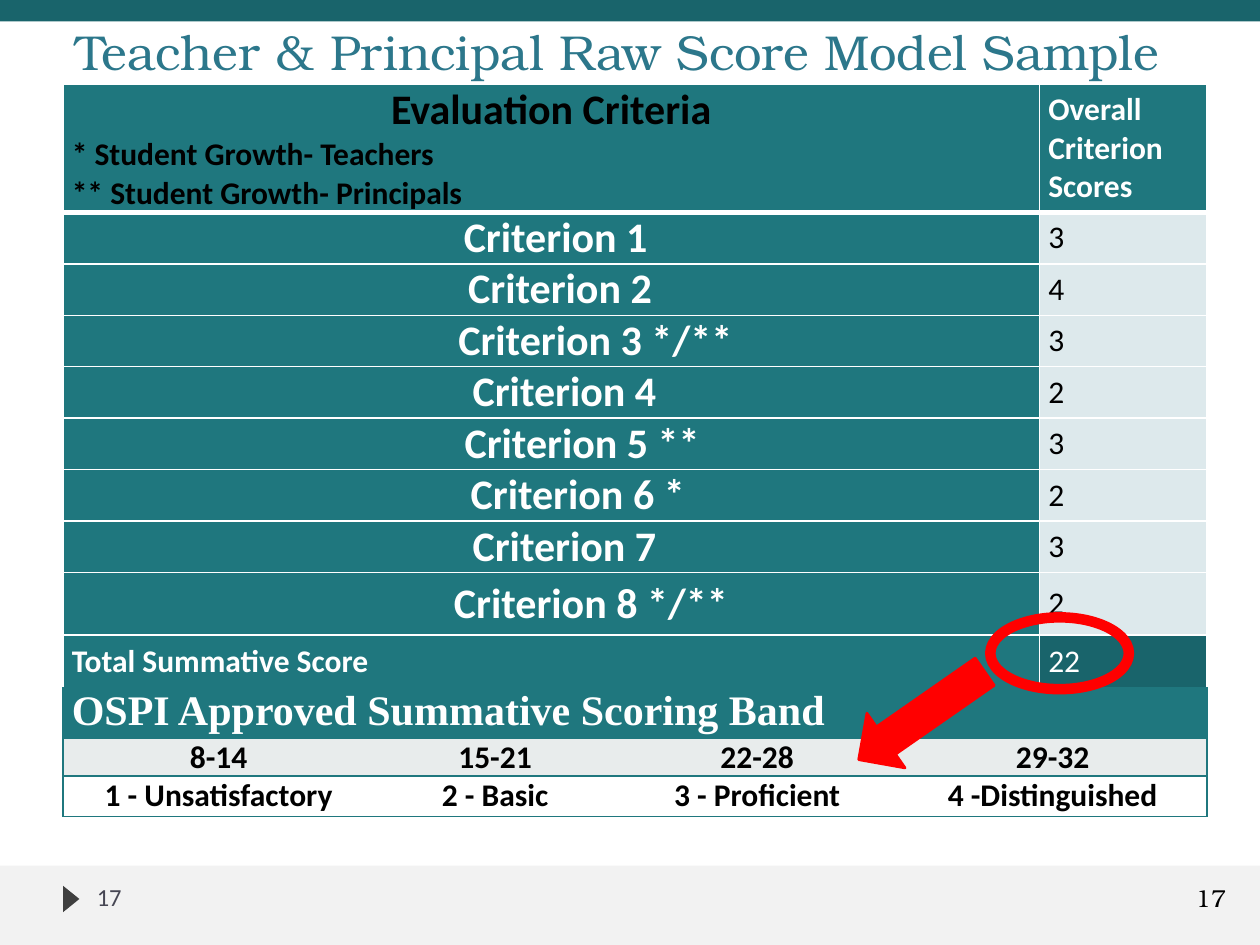
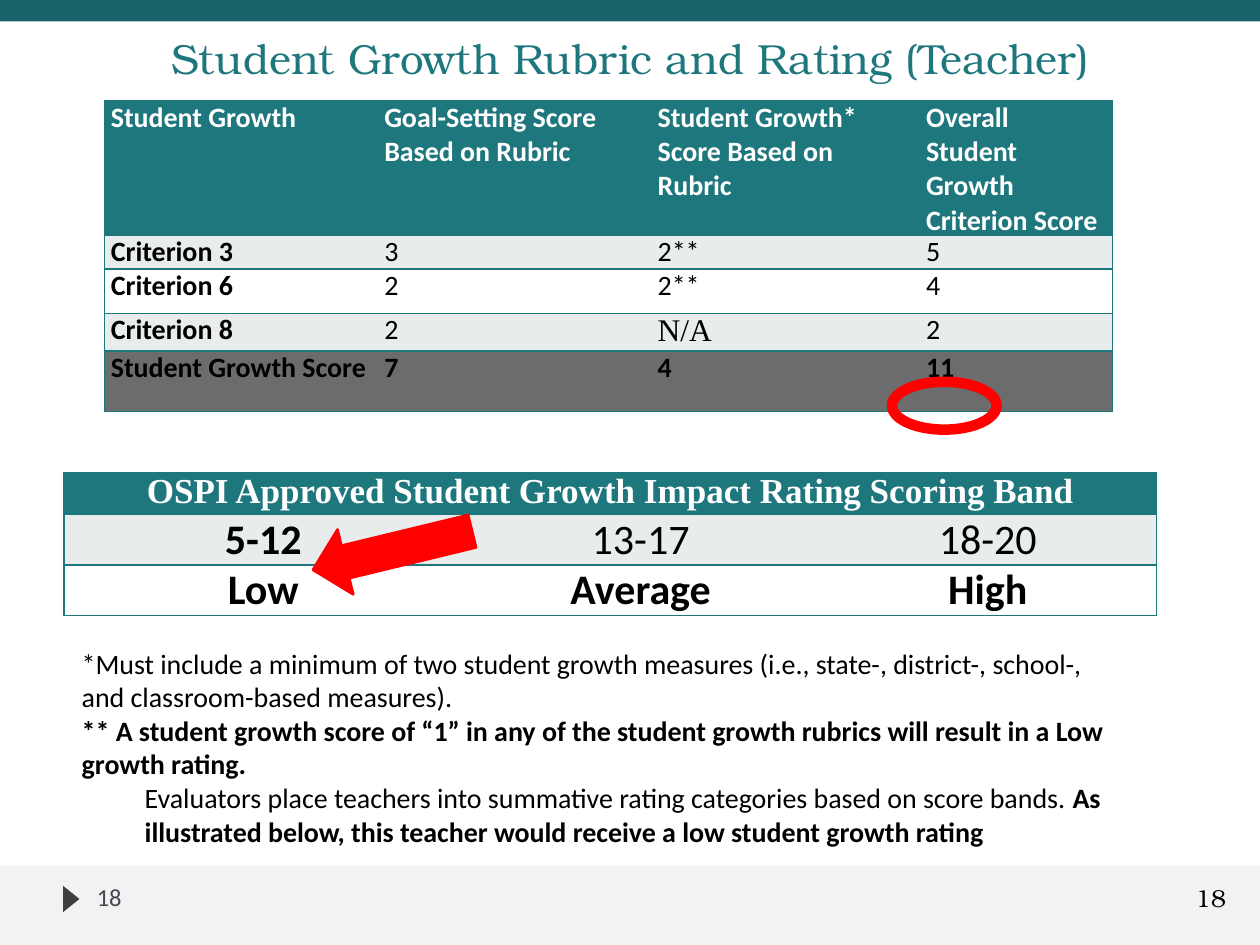
from dataclasses import dataclass, replace

from lxml import etree
from pptx import Presentation
from pptx.dml.color import RGBColor
from pptx.enum.shapes import MSO_SHAPE
from pptx.enum.text import MSO_ANCHOR, MSO_AUTO_SIZE, PP_ALIGN
from pptx.oxml.ns import qn
from pptx.util import Inches, Pt

RECTANGLE, TRIANGLE = MSO_SHAPE.RECTANGLE, MSO_SHAPE.ISOSCELES_TRIANGLE
OVAL, DOWN_ARROW = MSO_SHAPE.OVAL, MSO_SHAPE.DOWN_ARROW
LEFT, CENTER, RIGHT = PP_ALIGN.LEFT, PP_ALIGN.CENTER, PP_ALIGN.RIGHT
TOP, MIDDLE, BOTTOM = MSO_ANCHOR.TOP, MSO_ANCHOR.MIDDLE, MSO_ANCHOR.BOTTOM
NO_AUTOFIT = MSO_AUTO_SIZE.NONE

TEAL = RGBColor(0x1F, 0x77, 0x7E)
DARK_TEAL = RGBColor(0x19, 0x64, 0x6B)
TITLE_BLUE = RGBColor(0x2C, 0x77, 0x8B)
PALE_BLUE = RGBColor(0xDD, 0xE9, 0xEC)
PALE_GREY = RGBColor(0xE8, 0xEC, 0xEC)
FOOTER_GREY = RGBColor(0xF2, 0xF2, 0xF2)
TOTAL_GREY = RGBColor(0x6C, 0x6C, 0x6C)
MARKER_GREY = RGBColor(0x3F, 0x3F, 0x3F)
NUMBER_GREY = RGBColor(0x46, 0x46, 0x53)
RED = RGBColor(0xFF, 0, 0)
BLACK = RGBColor(0, 0, 0)
WHITE = RGBColor(0xFF, 0xFF, 0xFF)

SANS, DISPLAY, SERIF = "Calibri", "TeX Gyre Bonum", "Times New Roman"
GRID_COLUMNS, GRID_ROWS = 100, 75
UNIT = Inches(0.1)
SPACE_WIDTH = Inches(0.07)


@dataclass(frozen=True)
class Box:
    """An area measured in grid columns and rows."""
    left: float
    top: float
    width: float
    height: float

    def area(self, left, top, width, height):
        """Return an area placed from this area's corner."""
        return Box(self.left + left, self.top + top, width, height)

    def lengths(self):
        """Return left, top, width and height as slide lengths."""
        return [round(side * UNIT) for side in (self.left, self.top, self.width, self.height)]


@dataclass(frozen=True)
class Look:
    """The font, size, colour and weight of a run."""
    size: int
    color: RGBColor = BLACK
    bold: bool = False
    font: str = SANS


@dataclass(frozen=True)
class Line:
    """One paragraph: its runs, alignment and indent."""
    runs: tuple
    align: int = LEFT
    indent: int = 0


PAGE = Box(0, 0, GRID_COLUMNS, GRID_ROWS)


def line(text, look, align=LEFT, indent=0):
    """Make a paragraph of a single run."""
    return Line(((text, look),), align, indent)


def write(frame, lines):
    """Fill a text frame run by run."""
    frame.word_wrap = True
    for index, item in enumerate(lines):
        para = frame.add_paragraph() if index else frame.paragraphs[0]
        para.alignment = item.align
        para.space_before = Pt(0)
        if item.indent:
            properties = para._p.get_or_add_pPr()
            properties.set("marL", str(item.indent))
            properties.set("indent", "0")
        for text, look in item.runs:
            span = para.add_run()
            span.text = text
            span.font.name = look.font
            span.font.size = Pt(look.size)
            span.font.bold = look.bold
            span.font.color.rgb = look.color


def add_text(page, box, lines):
    """Place a text box."""
    write(page.shapes.add_textbox(*box.lengths()).text_frame, lines)


def add_form(page, kind, box, fill=None, outline=None, weight=0, turn=0):
    """Place a preset shape with an optional fill and outline."""
    form = page.shapes.add_shape(kind, *box.lengths())
    form.shadow.inherit = False
    form.rotation = turn
    if fill is None:
        form.fill.background()
    else:
        form.fill.solid()
        form.fill.fore_color.rgb = fill
    if outline is None:
        form.line.fill.background()
    else:
        form.line.color.rgb = outline
        form.line.width = Pt(weight)


def add_ring(page, box):
    """Circle a score in red."""
    add_form(page, OVAL, box, outline=RED, weight=6)


def add_pointer(page, box, turn):
    """Point a red arrow at a score band."""
    add_form(page, DOWN_ARROW, box, RED, RED, 1.5, turn)


def set_edges(cell, edges):
    """Draw the left, right, top and bottom edges from (colour, points) pairs."""
    properties = cell._tc.get_or_add_tcPr()
    for index, (side, edge) in enumerate(zip("LRTB", edges)):
        border = etree.Element(qn(f"a:ln{side}"))
        if edge:
            color, weight = edge
            border.set("w", str(Pt(weight)))
            solid = etree.SubElement(border, qn("a:solidFill"))
            etree.SubElement(solid, qn("a:srgbClr"), val=str(color))
        else:
            etree.SubElement(border, qn("a:noFill"))
        properties.insert(index, border)


def fill_cell(cell, lines, fill, edges, anchor=TOP, inset=0.07):
    """Write and format one table cell."""
    cell.margin_left = cell.margin_right = Inches(inset)
    cell.margin_top = cell.margin_bottom = 0
    cell.vertical_anchor = anchor
    cell.fill.solid()
    cell.fill.fore_color.rgb = fill
    write(cell.text_frame, lines)
    set_edges(cell, edges)


def add_grid(page, box, columns, rows):
    """Place a table whose columns and rows share the box by weight."""
    table = page.shapes.add_table(len(rows), len(columns), *box.lengths()).table
    _, _, width, height = box.lengths()
    for column, weight in zip(table.columns, columns):
        column.width = round(width * weight / sum(columns))
    for row, weight in zip(table.rows, rows):
        row.height = round(height * weight / sum(rows))
    return table


def ruled_edges(column, last):
    """Return teal rules above and below, closed at the table's sides."""
    rule = (TEAL, 1)
    return (rule if column == 0 else None, rule if column == last else None, rule, rule)


def add_band(page, box, columns, rows, heading, body):
    """Place a scoring band: a merged heading over rows of centred cells."""
    table = add_grid(page, box, columns, rows)
    last = len(columns) - 1
    table.cell(0, 0).merge(table.cell(0, last))
    for column in range(last + 1):
        lines = [heading] if column == 0 else []
        fill_cell(table.cell(0, column), lines, TEAL, [(TEAL, 1)] * 4)
    for row, (fill, entries) in enumerate(zip((PALE_GREY, WHITE), body), 1):
        for column, (text, look) in enumerate(entries):
            fill_cell(table.cell(row, column), [line(text, look, CENTER)], fill,
                      ruled_edges(column, last))


def add_criteria(page, box):
    """Place the table of criterion scores."""
    criteria = (("1", 1, "3"), ("2", 2, "4"), ("3 */**", 10, "3"), ("4", 3, "2"),
                ("5 **", 7, "3"), ("6 *", 6, "2"), ("7", 3, "3"), ("8 */**", 9, "2"))
    table = add_grid(page, box, (7.75, 1.33), (1.02, *[0.41] * 7, 0.5, 0.42))
    label, white = Look(18, BLACK, True), Look(18, WHITE, True)
    rows = [([line("Evaluation Criteria", replace(label, size=24), CENTER),
              line("* Student Growth- Teachers", label),
              line("** Student Growth- Principals", label)],
             line("Overall Criterion Scores", white), TEAL)]
    for name, shift, score in criteria:
        title = line(f"Criterion {name}", Look(24, WHITE, True), CENTER, shift * SPACE_WIDTH)
        rows.append(([title], line(score, Look(18)), PALE_BLUE))
    rows.append(([line("Total Summative Score", white)], line("22", Look(18, WHITE)), DARK_TEAL))
    for index, (names, score, fill) in enumerate(rows):
        edges = [(WHITE, 1), (WHITE, 1), (WHITE, 3 if index == 1 else 1),
                 (WHITE, 1 if index else 3)]
        fill_cell(table.cell(index, 0), names, TEAL, edges, MIDDLE)
        fill_cell(table.cell(index, 1), [score], fill, edges, MIDDLE)


def add_rubric(page, box):
    """Place the student growth rubric table."""
    table = add_grid(page, box, (2.17, 2.17, 2.13, 1.53), (0.82, 0.27, 0.35, 0.28, 0.48))
    rows = (
        (TEAL, ("Student Growth", "Goal-Setting Score Based on Rubric",
                "Student Growth* Score Based on Rubric",
                "Overall Student Growth Criterion Score")),
        (PALE_GREY, ("Criterion 3", "3", "2**", "5")),
        (WHITE, ("Criterion 6", "2", "2**", "4")),
        (PALE_GREY, ("Criterion 8", "2", "N/A", "2")),
        (TOTAL_GREY, ("Student Growth Score", "7", "4", "11")),
    )
    for row, (fill, texts) in enumerate(rows):
        for column, text in enumerate(texts):
            strong = column == 0 or fill in (TEAL, TOTAL_GREY)
            look = Look(16, WHITE if fill == TEAL else BLACK, strong)
            if text == "N/A":
                look = Look(18, font=SERIF)
            fill_cell(table.cell(row, column), [line(text, look)], fill,
                      ruled_edges(column, len(texts) - 1), inset=0.05)


def add_footnotes(page, box):
    """Place the footnotes under the scoring band."""
    plain, strong = Look(16), Look(16, bold=True)
    add_text(page, box, [
        line("*Must include a minimum of two student growth measures (i.e., state-, "
             "district-, school-, and classroom-based measures).", plain),
        line("** A student growth score of “1” in any of the student growth rubrics "
             "will result in a Low growth rating.", strong),
        Line((("Evaluators place teachers into summative rating categories based on "
               "score bands. ", plain),
              ("As illustrated below, this teacher would receive a low student growth "
               "rating", strong)), indent=Inches(0.5)),
    ])


def add_title(page, box, title, anchor, foot=0.05):
    """Move and format the title placeholder."""
    holder = page.shapes.title
    holder.left, holder.top, holder.width, holder.height = box.lengths()
    frame = holder.text_frame
    frame.auto_size = NO_AUTOFIT
    frame.vertical_anchor = anchor
    frame.margin_bottom = Inches(foot)
    write(frame, [title])


def add_page(deck, number):
    """Add a page with the shared bands, marker and page numbers."""
    page = deck.slides.add_slide(deck.slide_layouts[5])
    footer = PAGE.area(0, 68.7, GRID_COLUMNS, 6.3)
    add_form(page, RECTANGLE, footer, FOOTER_GREY)
    add_form(page, RECTANGLE, PAGE.area(0, 0, GRID_COLUMNS, 1.7), DARK_TEAL)
    add_form(page, TRIANGLE, footer.area(4.6, 2, 2.1, 1.3), MARKER_GREY, turn=90)
    add_text(page, footer.area(6.7, 0.8, 21.7, 4), [line(number, Look(14, NUMBER_GREY))])
    add_text(page, footer.area(93.3, 0.9, 5, 3.4),
             [line(number, Look(14, font=DISPLAY), RIGHT)])
    return page


def build_raw_score(deck):
    """Build the raw score page."""
    page = add_page(deck, "17")
    title = line("Teacher & Principal Raw Score Model Sample",
                 Look(28, TITLE_BLUE, font=DISPLAY))
    add_title(page, PAGE.area(5, -1.1, 90, 12.5), title, BOTTOM, 0.5)
    scores = PAGE.area(5, 6.7, 90.8, 47.9)
    add_criteria(page, scores)
    strong = Look(18, bold=True)
    ranges = ("8-14", "15-21", "22-28", "29-32")
    ratings = ("1 - Unsatisfactory", "2 - Basic", "3 - Proficient", "4 -Distinguished")
    add_band(page, PAGE.area(5, 54.6, 90.8, 10), (2.47, 1.92, 2.24, 2.45),
             (0.38, 0.3, 0.32),
             line("OSPI Approved Summative Scoring Band", Look(24, WHITE, True, SERIF)),
             [[(text, strong) for text in texts] for texts in (ranges, ratings)])
    add_pointer(page, scores.area(65.5, 44, 5.3, 12.2), 55.1)
    add_ring(page, scores.area(73.6, 42.3, 11, 5.7))


def build_growth(deck):
    """Build the student growth page."""
    page = add_page(deck, "18")
    title = line("Student Growth Rubric and Rating (Teacher)",
                 Look(24, TEAL, font=DISPLAY), CENTER)
    add_title(page, PAGE.area(5, 2.1, 90, 9.6), title, TOP)
    rubric = PAGE.area(8.3, 8, 80, 22)
    add_rubric(page, rubric)
    add_footnotes(page, PAGE.area(5.5, 50.8, 85.1, 17.2))
    band = PAGE.area(5.1, 37.5, 86.7, 11.3)
    plain, strong = Look(24), Look(24, bold=True)
    add_band(page, band, (3.16, 2.83, 2.68), (0.33, 0.4, 0.4),
             line("OSPI Approved Student Growth Impact Rating Scoring Band",
                  Look(20, WHITE, True, SERIF), CENTER),
             [[("5-12", strong), ("13-17", plain), ("18-20", plain)],
              [("Low", strong), ("Average", strong), ("High", strong)]])
    add_ring(page, rubric.area(62.5, 22.3, 8.3, 3.8))
    add_pointer(page, band.area(23.4, -0.3, 5.3, 13), 76.4)


def main():
    """Build and save the deck."""
    deck = Presentation()
    deck.slide_width, deck.slide_height = GRID_COLUMNS * UNIT, GRID_ROWS * UNIT
    build_raw_score(deck)
    build_growth(deck)
    deck.save("out.pptx")


if __name__ == "__main__":
    main()
